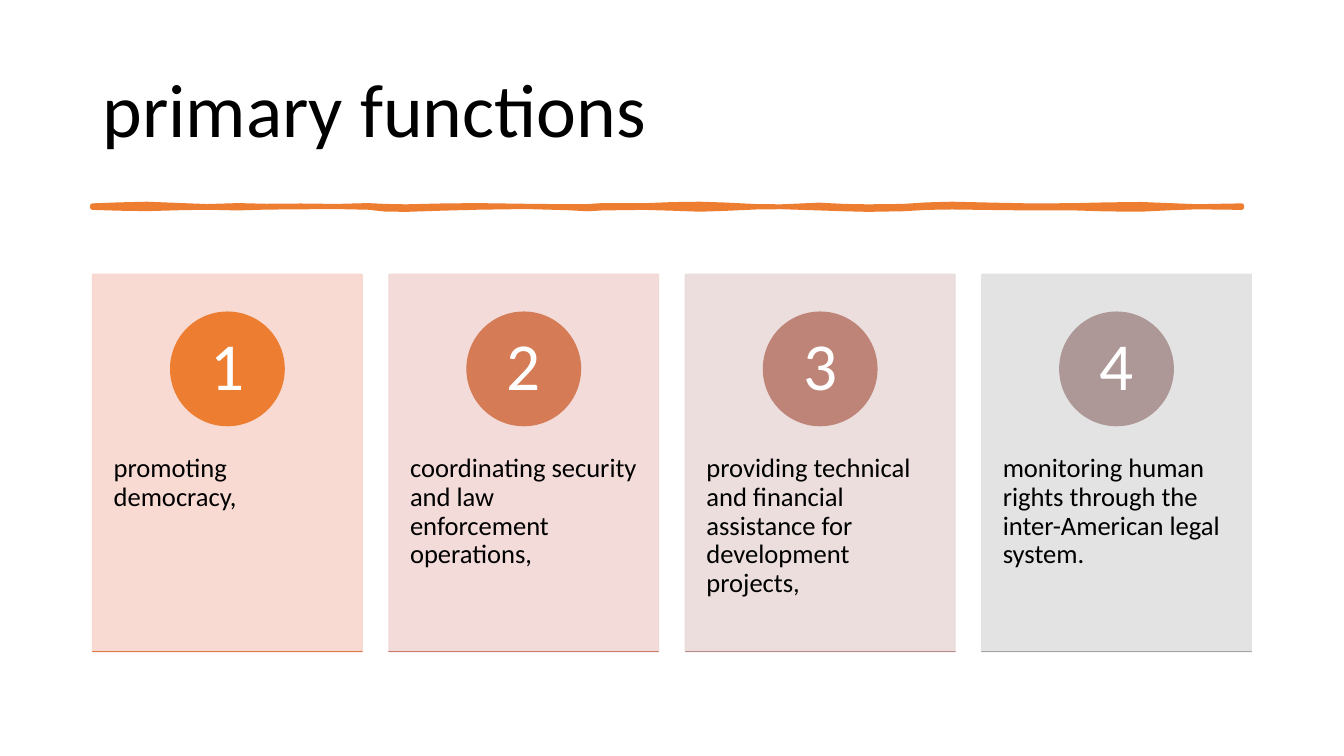
from lxml.etree import SubElement
from pptx import Presentation
from pptx.dml.color import RGBColor
from pptx.enum.shapes import MSO_SHAPE as Kind
from pptx.enum.text import MSO_ANCHOR as Anchor, PP_ALIGN as Align
from pptx.oxml.ns import qn
from pptx.util import Pt


def paint(shape, color, width=1, alpha=100):
    """Give fill and line one colour, with alpha in percent."""
    shape.shadow.inherit = False
    shape.fill.solid()
    shape.line.width = Pt(width)
    for part in (shape.fill.fore_color, shape.line.color):
        part.rgb = RGBColor.from_string(color)
    if alpha < 100:
        for node in shape.element.spPr.iter(qn("a:srgbClr")):
            SubElement(node, qn("a:alpha")).set("val", str(alpha * 1000))


def write(shape, text, size, color, align, anchor, pads):
    """Set one paragraph; pads are left, top, right and bottom."""
    frame = shape.text_frame
    frame.text = text
    frame.word_wrap = True
    frame.vertical_anchor = anchor
    (frame.margin_left, frame.margin_top,
     frame.margin_right, frame.margin_bottom) = map(Pt, pads)
    line = frame.paragraphs[0]
    line.alignment = align
    line.line_spacing = 0.9
    font = line.runs[0].font
    font.name = "Calibri"
    font.size = Pt(size)
    font.color.rgb = RGBColor.from_string(color)


deck = Presentation()
deck.slide_width, deck.slide_height = Pt(960), Pt(540)
slide = deck.slides.add_slide(deck.slide_layouts[5])
shapes = slide.shapes

title = shapes.title
title.left, title.top, title.width, title.height = map(Pt, (66, 28.8, 828, 104.4))
write(title, "primary functions", 54, "000000", Align.LEFT, Anchor.MIDDLE,
      (7.2, 3.6, 7.2, 3.6))

# Brush stroke: x, rise above and drop below its middle
stroke = [
    (66, 0.7, 0.7), (85, 1.4, 1.3), (105, 1.9, 1.6), (130, 0.9, 0.9),
    (148, 0.2, 0.6), (170, 0.9, 1.1), (190, 0.4, 0.5), (215, 0.6, 0.3),
    (240, 0.3, 0.1), (263, 0.9, 0.6), (275, 0.3, 1.9), (290, 0, 2.1),
    (315, 0.6, 1.3), (340, 0.9, 0.6), (375, 0.4, 0.1), (405, 0.1, 0.9),
    (420, 0.2, 1.7), (430, 0.9, 1.1), (460, 0.8, 0.7), (480, 1.6, 1.3),
    (500, 1.9, 2), (518, 1.3, 1.4), (540, 0.2, 0.4), (558, 0, 0.2),
    (585, 1.2, 1.1), (603, 0.3, 1.7), (620, 0, 2.1), (645, 0.3, 1.7),
    (662, 1.4, 0.7), (680, 1.9, 0.4), (710, 1.2, 0.8), (735, 0.7, 1.1),
    (765, 0.8, 1), (790, 1.4, 1.8), (815, 1.7, 2), (835, 0.9, 1),
    (855, 0.1, 0.3), (887, 0.7, 0.7),
]
mid = 147.6
edge = [(x, mid - up) for x, up, down in stroke]
edge += [(x, mid + down) for x, up, down in reversed(stroke)]
edge = [(Pt(x), Pt(y)) for x, y in edge]
brush = shapes.build_freeform(*edge[0])
brush.add_line_segments(edge[1:])
paint(brush.convert_to_shape(), "ED7D31", 3.25)

# Card, circle and base line colours, then the text
cards = [
    ("F8D7CE", "ED7D31", "E07A44", "promoting democracy,"),
    ("F1D8D4", "D57B56", "CA7E67",
     "coordinating security and law enforcement operations,"),
    ("E9DBDA", "BF8478", "B68D88",
     "providing technical and financial assistance for development projects,"),
    ("E1E1E1", "AD9897", "A5A5A5",
     "monitoring human rights through the inter-American legal system."),
]
top, wide, high, step, size = 196, 192.5, 269.5, 211.7, 81
for i, (pale, full, base, text) in enumerate(cards):
    left = 66.2 + i * step
    card = shapes.add_shape(Kind.RECTANGLE, Pt(left), Pt(top), Pt(wide), Pt(high))
    paint(card, pale, alpha=90)
    write(card, text, 19, "000000", Align.LEFT, Anchor.TOP, (15, 128.8, 15, 26))

    disc = shapes.add_shape(Kind.OVAL, Pt(left + (wide - size) / 2),
                            Pt(top + 27), Pt(size), Pt(size))
    paint(disc, full)
    write(disc, str(i + 1), 48, "FFFFFF", Align.CENTER, Anchor.MIDDLE,
          (6.4, 1, 6.4, 1))

    foot = shapes.add_shape(Kind.RECTANGLE, Pt(left), Pt(top + high),
                            Pt(wide), Pt(0.01))
    paint(foot, base)

deck.save("out.pptx")
